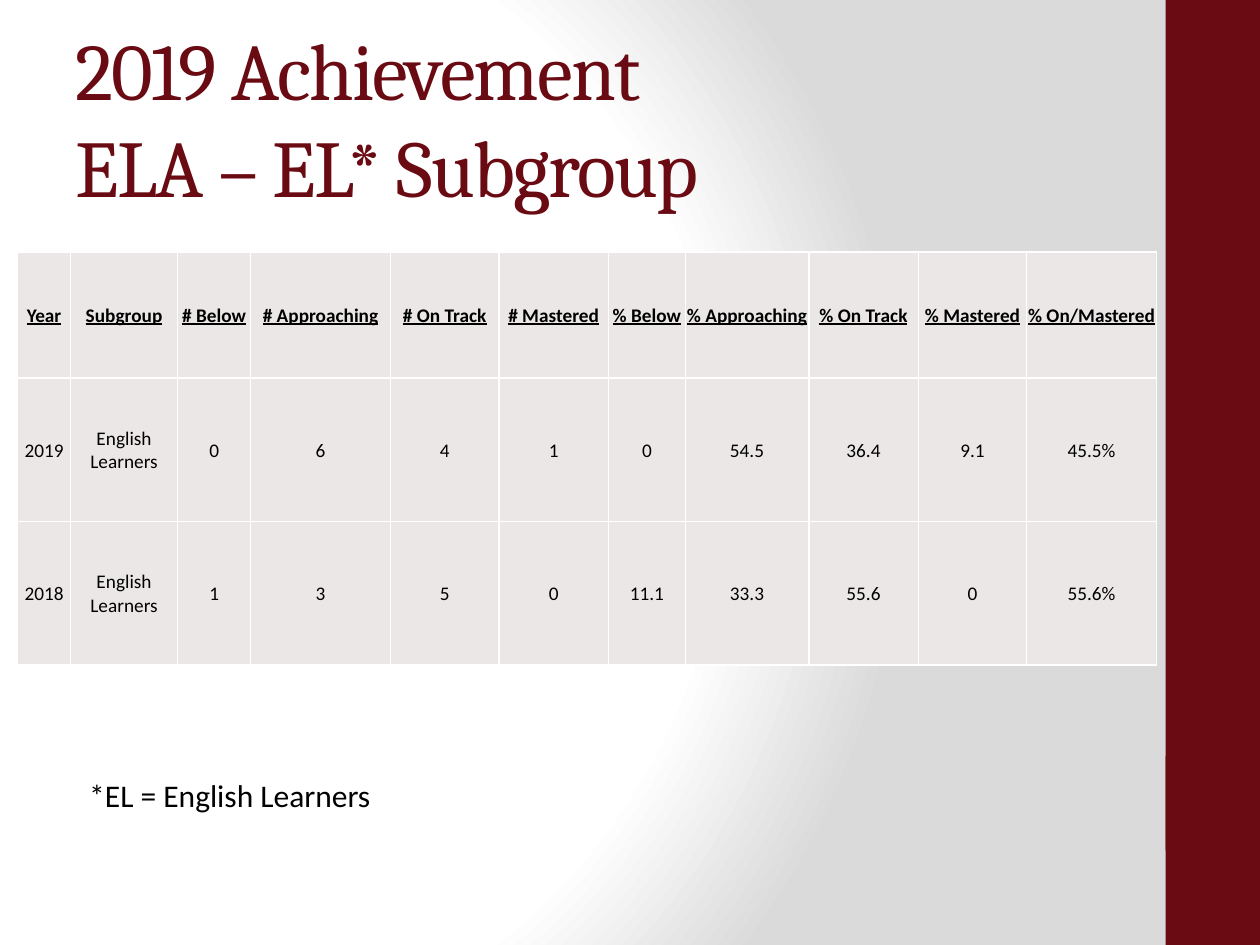
from lxml import etree
from pptx import Presentation, util as u
from pptx.dml.color import RGBColor
from pptx.enum import shapes, text
from pptx.oxml import ns, parse_xml

HUES = {"wine": "6A0A12", "ink": "000000", "cell": "EBE7E7",
        "white": "FFFFFF", "gray": "DADADA"}
HEADS = ["Year", "Subgroup", "# Below", "# Approaching", "# On Track",
         "# Mastered", "% Below", "% Approaching", "% On Track",
         "% Mastered", "% On/Mastered"]
ROWS = [
    ["2019", "English Learners", "0", "6", "4", "1",
     "0", "54.5", "36.4", "9.1", "45.5%"],
    ["2018", "English Learners", "1", "3", "5", "0",
     "11.1", "33.3", "55.6", "0", "55.6%"],
]
WIDTHS = [0.42, 0.85, 0.58, 1.11, 0.86, 0.87, 0.61, 0.98, 0.87, 0.86, 1.03]
HEIGHTS = [1, 1.14, 1.14]


def color(name):
    return RGBColor.from_string(HUES[name])


def write(frame, words, size=11, face="Calibri", hue="ink", bold=False,
          under=False, align=text.PP_ALIGN.LEFT, space=0):
    para = frame.paragraphs[0]
    para.alignment = align
    for i, line in enumerate(words.split("\n")):
        if i:
            para.add_line_break()
        run = para.add_run()
        run.text = line
        font = run.font
        font.size, font.name = u.Pt(size), face
        font.bold, font.underline = bold, under
        font.color.rgb = color(hue)
        if space:
            run._r.get_or_add_rPr().set("spc", str(space * 100))


def add_text(slide, box, words, wrap=True,
             anchor=text.MSO_ANCHOR.TOP, **style):
    frame = slide.shapes.add_textbox(*map(u.Inches, box)).text_frame
    frame.word_wrap = wrap
    frame.vertical_anchor = anchor
    write(frame, words, **style)


def paint_back(slide):
    # Round gradient, white on the left and gray on the right
    fill = slide.background.fill
    fill.solid()
    fill.fore_color.rgb = color("white")
    stops = "".join(
        f'<a:gs pos="{pos * 1000}"><a:srgbClr val="{HUES[hue]}"/></a:gs>'
        for pos, hue in [(0, "white"), (75, "white"), (100, "gray")])
    grad = parse_xml(
        f'<a:gradFill {ns.nsdecls("a")} rotWithShape="1">'
        f'<a:gsLst>{stops}</a:gsLst><a:path path="circle">'
        '<a:fillToRect l="20000" t="50000" r="100000" b="50000"/>'
        '</a:path></a:gradFill>')
    solid = slide.background._cSld.find(".//" + ns.qn("a:solidFill"))
    solid.getparent().replace(solid, grad)


def add_band(slide, box):
    # Side band, with the square for the page number on it
    left, top, wide, high = box
    for y, tall in [(top, high), (top + 6, wide)]:
        band = slide.shapes.add_shape(
            shapes.MSO_SHAPE.RECTANGLE, *map(u.Inches, (left, y, wide, tall)))
        band.shadow.inherit = False
        band.fill.solid()
        band.fill.fore_color.rgb = color("wine")
        band.line.fill.background()


def add_edges(cell):
    props = cell._tc.get_or_add_tcPr()
    for i, side in enumerate(["lnL", "lnR", "lnT", "lnB"]):
        edge = etree.Element(ns.qn("a:" + side), w=str(u.Pt(1)))
        fill = etree.SubElement(edge, ns.qn("a:solidFill"))
        etree.SubElement(fill, ns.qn("a:srgbClr"), val=HUES["white"])
        props.insert(i, edge)


def add_scores(slide, box):
    rows = [HEADS] + ROWS
    table = slide.shapes.add_table(
        len(rows), len(HEADS), *map(u.Inches, box)).table
    table.first_row = table.horz_banding = False
    for col, wide in zip(table.columns, WIDTHS):
        col.width = u.Inches(wide)
    for r, (row, high) in enumerate(zip(rows, HEIGHTS)):
        table.rows[r].height = u.Inches(high)
        for c, words in enumerate(row):
            cell = table.cell(r, c)
            cell.fill.solid()
            cell.fill.fore_color.rgb = color("cell")
            cell.vertical_anchor = text.MSO_ANCHOR.MIDDLE
            cell.margin_left = cell.margin_right = u.Inches(0.01)
            cell.margin_top, cell.margin_bottom = u.Inches(0.01), 0
            write(cell.text_frame, words, bold=r == 0, under=r == 0,
                  align=text.PP_ALIGN.CENTER)
            add_edges(cell)


def main():
    deck = Presentation()
    deck.slide_width, deck.slide_height = u.Inches(10), u.Inches(7.5)
    slide = deck.slides.add_slide(deck.slide_layouts[6])
    paint_back(slide)
    add_band(slide, (9.25, 0, 0.75, 7.5))
    # Title
    add_text(slide, (0.5, 0.3, 8.33, 1.25),
             "2019 Achievement\nELA – EL* Subgroup", size=46, face="Cambria",
             hue="wine", space=-1, anchor=text.MSO_ANCHOR.MIDDLE)
    # Footnote
    add_text(slide, (0.61, 6.11, 2.46, 1.01), "*EL = English Learners",
             wrap=False, size=18)
    add_scores(slide, (0.14, 2, 9.03, 3.27))
    deck.save("out.pptx")


if __name__ == "__main__":
    main()
